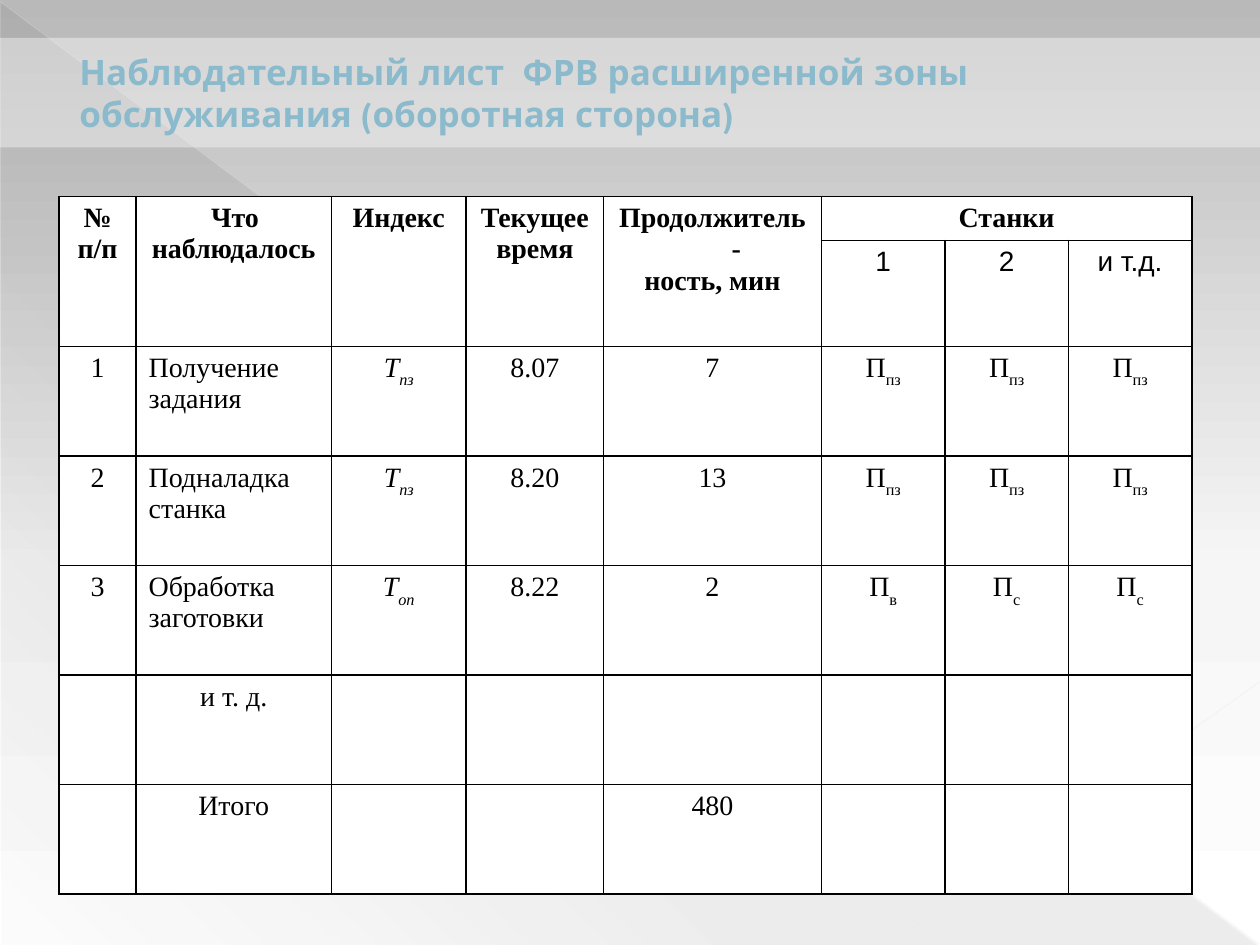
"""Build the observation sheet slide with its table of machine timings."""
from dataclasses import dataclass

from lxml import etree
from pptx import Presentation, util as u
from pptx.dml.color import RGBColor
from pptx.enum import shapes as sh, text as tx
from pptx.oxml import parse_xml
from pptx.oxml.ns import nsdecls, qn

HUES = {"ink": "000000", "paper": "FFFFFF", "title": "8ABACB", "edge": "4C6F7A",
        "veil": "3B3B3B", "dark": "B9B9B9", "pale": "F6F6F6",
        "fall": "EAE8E6", "rise": "ECEAE8"}
COLS = [0.61, 1.55, 1.07, 1.09, 1.73, 0.98, 0.98, 0.98]
ROWS = [0.34, 0.84] + [0.87] * 5


@dataclass(frozen=True)
class Look:
    font: str = "Times New Roman"
    bold: bool = False
    slant: bool = False
    left: float = 0.38
    hang: float = -0.38
    align: tx.PP_ALIGN = tx.PP_ALIGN.CENTER
    space: float = 0


@dataclass(frozen=True)
class Stop:
    pos: int
    hue: str
    alpha: int = 100


@dataclass(frozen=True)
class Ray:
    start: tuple
    end: tuple
    hue: str
    width: float
    alpha: int


HEAD = Look(bold=True)
WIDE = Look(bold=True, left=0, hang=0.02)
UNIT = Look(font="Arial")
BODY = Look()
TASK = Look(left=0, hang=0, align=tx.PP_ALIGN.LEFT, space=3.2)
MARK = Look(slant=True)

HEADS = [("№\nп/п", HEAD), ("Что наблюдалось", WIDE), ("Индекс", HEAD),
         ("Текущее\nвремя", HEAD), ("Продолжитель-\nность, мин", HEAD),
         ("Станки", HEAD)]
UNITS = ["1", "2", "и т.д."]
TASKS = [
    ["1", "Получение задания", "Т_пз", "8.07", "7", "П_пз", "П_пз", "П_пз"],
    ["2", "Подналадка станка", "Т_пз", "8.20", "13", "П_пз", "П_пз", "П_пз"],
    ["3", "Обработка заготовки", "Т_оп", "8.22", "2", "П_в", "П_с", "П_с"],
]
LOOKS = [BODY, TASK, MARK] + [BODY] * 5
TAILS = [(5, 1, "и т. д."), (6, 1, "Итого"), (6, 4, "480")]
RAYS = [Ray((0, 0.01), (9.99, 7.49), "fall", 0.39, 35),
        Ray((10, 5.41), (7.07, 7.49), "rise", 0.47, 45)]


def tint(hue: str) -> RGBColor:
    return RGBColor.from_string(HUES[hue])


def fade(solid, alpha: int) -> None:
    etree.SubElement(solid[0], qn("a:alpha")).set("val", str(alpha * 1000))


def blend(host, stops: list[Stop], angle: int) -> None:
    marks = "".join(
        f'<a:gs pos="{s.pos * 1000}"><a:srgbClr val="{HUES[s.hue]}">'
        f'<a:alpha val="{s.alpha * 1000}"/></a:srgbClr></a:gs>' for s in stops)
    grad = parse_xml(f'<a:gradFill {nsdecls("a")} rotWithShape="1"><a:gsLst>{marks}'
                     f'</a:gsLst><a:lin ang="{angle * 60000}" scaled="0"/></a:gradFill>')
    host.replace(host.find(qn("a:solidFill")), grad)


def outline(tag: str, hue: str, width: float):
    return parse_xml(f'<a:{tag} {nsdecls("a")} w="{u.Pt(width)}"><a:solidFill>'
                     f'<a:srgbClr val="{HUES[hue]}"/></a:solidFill></a:{tag}>')


def indent(para, left: float, hang: float) -> None:
    props = para._p.get_or_add_pPr()
    props.set("marL", str(u.Inches(left)))
    props.set("indent", str(u.Inches(hang)))


def backdrop(slide) -> None:
    slide.background.fill.solid()
    blend(slide.element.find(".//" + qn("p:bgPr")),
          [Stop(0, "dark"), Stop(60, "pale"), Stop(100, "paper")], 90)
    wedge = slide.shapes.add_shape(
        sh.MSO_SHAPE.RIGHT_TRIANGLE, u.Inches(0.01), u.Inches(0.02),
        u.Inches(9.98), u.Inches(7.48))
    wedge.shadow.inherit = False
    wedge.line.fill.background()
    wedge.fill.solid()
    blend(wedge.element.spPr,
          [Stop(0, "veil", 10), Stop(70, "veil", 8), Stop(100, "veil", 1)], 133)


def draw(slide, ray: Ray) -> None:
    ends = [u.Inches(v) for v in ray.start + ray.end]
    line = slide.shapes.add_connector(sh.MSO_CONNECTOR.STRAIGHT, *ends)
    line.line.color.rgb = tint(ray.hue)
    line.line.width = u.Pt(ray.width)
    props = line.element.spPr
    fade(props.find(".//" + qn("a:solidFill")), ray.alpha)
    etree.SubElement(props, qn("a:effectLst"))


def head(slide, words: str) -> None:
    title = slide.shapes.title
    slide.shapes.element.append(title.element)
    title.left, title.top = u.Inches(0), u.Inches(0.3)
    title.width, title.height = u.Inches(10), u.Inches(0.87)
    title.fill.solid()
    title.fill.fore_color.rgb = tint("paper")
    fade(title.element.spPr.find(qn("a:solidFill")), 40)
    frame = title.text_frame
    frame.word_wrap = True
    frame.vertical_anchor = tx.MSO_ANCHOR.MIDDLE
    para = frame.paragraphs[0]
    para.alignment = tx.PP_ALIGN.LEFT
    indent(para, 0.53, 0)
    run = para.add_run()
    run.text = words
    run.font.name, run.font.size, run.font.bold = "League Spartan", u.Pt(20), True
    run.font.color.rgb = tint("title")
    run.font._element.insert(0, outline("ln", "edge", 0.5))


def write(cell, words: str, look: Look) -> None:
    frame = cell.text_frame
    for i, line in enumerate(words.split("\n")):
        para = frame.add_paragraph() if i else frame.paragraphs[0]
        para.alignment = look.align
        para.space_before = u.Pt(look.space)
        indent(para, look.left, look.hang)
        for j, part in enumerate(line.split("_")):
            run = para.add_run()
            run.text = part
            font = run.font
            font.name, font.size = look.font, u.Pt(16)
            font.bold, font.italic = look.bold, look.slant
            font.color.rgb = tint("ink")
            if j:
                font._element.set("baseline", "-30000")


def grid(slide):
    table = slide.shapes.add_table(
        len(ROWS), len(COLS), u.Inches(0.47), u.Inches(1.56),
        u.Inches(sum(COLS)), u.Inches(sum(ROWS))).table
    for col, width in zip(table.columns, COLS):
        col.width = u.Inches(width)
    for row, height in zip(table.rows, ROWS):
        row.height = u.Inches(height)
    for cell in table.iter_cells():
        cell.fill.solid()
        cell.fill.fore_color.rgb = tint("paper")
        for i, side in enumerate("LRTB"):
            cell._tc.tcPr.insert(i, outline("ln" + side, "ink", 1))
    for col in range(5):
        table.cell(0, col).merge(table.cell(1, col))
    table.cell(0, 5).merge(table.cell(0, 7))
    return table


def main() -> None:
    deck = Presentation()
    deck.slide_width, deck.slide_height = u.Inches(10), u.Inches(7.5)
    slide = deck.slides.add_slide(deck.slide_layouts[5])
    backdrop(slide)
    for ray in RAYS:
        draw(slide, ray)
    head(slide, "Наблюдательный лист  ФРВ расширенной зоны "
                "обслуживания (оборотная сторона)")
    table = grid(slide)
    for col, (words, look) in enumerate(HEADS):
        write(table.cell(0, col), words, look)
    for col, words in enumerate(UNITS, 5):
        write(table.cell(1, col), words, UNIT)
    for row, task in enumerate(TASKS, 2):
        for col, (words, look) in enumerate(zip(task, LOOKS)):
            write(table.cell(row, col), words, look)
    for row, col, words in TAILS:
        write(table.cell(row, col), words, BODY)
    deck.save("out.pptx")


if __name__ == "__main__":
    main()
